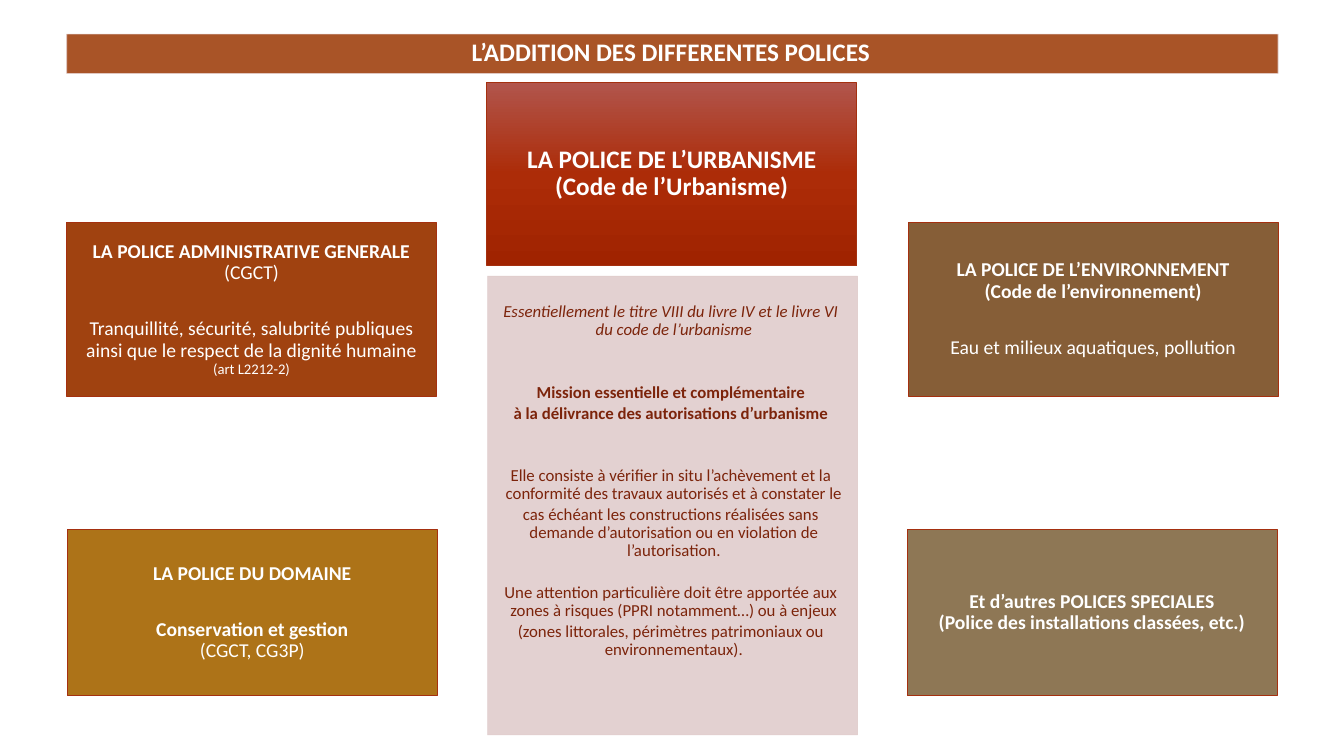
import copy

import pptx
import pptx.dml.color
import pptx.enum.shapes
import pptx.enum.text
import pptx.oxml.ns
import pptx.util
from lxml import etree

Cm = pptx.util.Cm
Pt = pptx.util.Pt
RGBColor = pptx.dml.color.RGBColor
Anchor = pptx.enum.text.MSO_ANCHOR
qn = pptx.oxml.ns.qn

WHITE = RGBColor(0xFF, 0xFF, 0xFF)
RUST = RGBColor(0xA0, 0x42, 0x10)
OCHRE = RGBColor(0xAD, 0x73, 0x18)
BROWN = RGBColor(0x86, 0x5E, 0x37)
TAUPE = RGBColor(0x8E, 0x77, 0x55)
PINK = RGBColor(0xE1, 0xCD, 0xCC)
MAROON = RGBColor(0x7C, 0x24, 0x0B)
BORDER = RGBColor(0xA5, 0x30, 0x0F)
URBANISME_STOPS = [
    (0, RGBColor(0xB1, 0x55, 0x4C)),
    (0.5, RGBColor(0xAC, 0x2C, 0x08)),
    (1, RGBColor(0xA0, 0x23, 0x00)),
]

BANNER = "L’ADDITION DES DIFFERENTES POLICES"
BANNER_PLACE = (1.68, 0.86, 30.53, 0.99)

# Each paragraph is (gap in lines, [(line, size, style), ...]).
MISSION = [
    (0, [("Essentiellement le titre VIII du livre IV et le livre VI du code de l’urbanisme", 12, "i")]),
    (2, [("Mission essentielle et complémentaire", 12, "b")]),
    (0, [("à la délivrance des autorisations d’urbanisme", 12, "b")]),
    (2, [("Elle consiste à vérifier in situ l’achèvement et la conformité des travaux "
          "autorisés et à constater le", 12, "")]),
    (0, [("cas échéant les constructions réalisées sans demande d’autorisation ou en "
          "violation de l’autorisation.", 12, "")]),
    (1, [("Une attention particulière doit être apportée aux zones à risques (PPRI "
          "notamment…) ou à enjeux", 12, "")]),
    (0, [("(zones littorales, périmètres patrimoniaux ou environnementaux).", 12, "")]),
]
MISSION_PLACE = (12.29, 6.96, 9.32, 11.56)

URBANISME = [(0, [("LA POLICE DE L’URBANISME", 18, "b"), ("(Code de l’Urbanisme)", 18, "b")])]
URBANISME_PLACE = (12.27, 2.08, 9.32, 4.62)

BOX_WIDTH = 9.32
UPPER_ROW = (5.61, 4.37)
LOWER_ROW = (13.34, 4.19)
POLICES = [
    (1.70, LOWER_ROW, OCHRE, [
        (0, [("LA POLICE DU DOMAINE", 14, "b")]),
        (1, [("Conservation et gestion", 14, "b"), ("(CGCT, CG3P)", 14, "")]),
    ]),
    (22.89, UPPER_ROW, BROWN, [
        (0, [("LA POLICE DE L’ENVIRONNEMENT", 14, "b"), ("(Code de l’environnement)", 14, "b")]),
        (1, [("Eau et milieux aquatiques, pollution", 14, "")]),
    ]),
    (22.86, LOWER_ROW, TAUPE, [
        (0, [("Et d’autres POLICES SPECIALES", 14, "b"),
             ("(Police des installations classées, etc.)", 14, "b")]),
    ]),
    (1.68, UPPER_ROW, RUST, [
        (0, [("LA POLICE ADMINISTRATIVE GENERALE", 14, "b"), ("(CGCT)", 14, "")]),
        (1, [("Tranquillité, sécurité, salubrité publiques ainsi que le respect de la "
              "dignité humaine", 14, ""), ("(art L2212-2)", 10.5, "")]),
    ]),
]


def paint(shape, fill, border, opacity=None):
    if fill:
        shape.fill.solid()
        shape.fill.fore_color.rgb = fill
    shape.line.color.rgb = border
    shape.line.width = Pt(0.5)
    if opacity:
        for colour in shape._element.spPr.iter(qn("a:srgbClr")):
            etree.SubElement(colour, qn("a:alpha"), val=str(opacity * 1000))


def write(shape, paragraphs, colour, spacing, insets, anchor, hanging=False):
    frame = shape.text_frame
    frame.word_wrap = True
    frame.auto_size = pptx.enum.text.MSO_AUTO_SIZE.NONE
    frame.vertical_anchor = anchor
    frame.margin_left, frame.margin_top, frame.margin_right, frame.margin_bottom = map(Cm, insets)
    frame.text = "\n".join("\v".join(line[0] for line in lines) for gap, lines in paragraphs)
    for paragraph, (gap, lines) in zip(frame.paragraphs, paragraphs):
        size = lines[0][1]
        after = size * spacing
        paragraph.alignment = pptx.enum.text.PP_ALIGN.CENTER
        paragraph.line_spacing = 0.9
        paragraph.space_before = Pt(gap * (size * 1.1 + after))
        paragraph.space_after = Pt(after)
        if hanging:
            properties = paragraph._p.get_or_add_pPr()
            properties.set("marL", str(Cm(0.15)))
            properties.set("indent", str(Cm(-0.15)))
        for run, (text, points, style) in zip(paragraph.runs, lines):
            run.font.name = "Calibri"
            run.font.size = Pt(points)
            run.font.bold = style == "b"
            run.font.italic = style == "i"
            run.font.color.rgb = colour
            following = run._r.getnext()
            if following is not None and following.tag == qn("a:br"):
                following.append(copy.deepcopy(run._r.rPr))


def add_box(slide, place):
    box = slide.shapes.add_shape(pptx.enum.shapes.MSO_SHAPE.RECTANGLE, *map(Cm, place))
    box.shadow.inherit = False
    return box


def main():
    deck = pptx.Presentation()
    deck.slide_width, deck.slide_height = Cm(33.87), Cm(19.05)
    slide = deck.slides.add_slide(deck.slide_layouts[5])

    mission = add_box(slide, MISSION_PLACE)
    paint(mission, PINK, PINK, 90)
    write(mission, MISSION, MAROON, 0.15, (0.15, 0.68, 0.23, 0.25), Anchor.TOP, True)

    urbanisme = add_box(slide, URBANISME_PLACE)
    urbanisme.fill.gradient()
    urbanisme.fill.gradient_angle = 270
    stops = urbanisme._element.spPr.find(".//" + qn("a:gsLst"))
    stops.insert(1, copy.deepcopy(stops[0]))
    for stop, (position, colour) in zip(urbanisme.fill.gradient_stops, URBANISME_STOPS):
        stop.position = position
        stop.color.rgb = colour
    paint(urbanisme, None, BORDER)
    box_insets = (0.23, 0.13, 0.23, 0.13)
    write(urbanisme, URBANISME, WHITE, 0.35, box_insets, Anchor.MIDDLE)

    banner = slide.shapes.title
    banner.left, banner.top, banner.width, banner.height = map(Cm, BANNER_PLACE)
    paint(banner, RUST, PINK, 90)
    write(banner, [(0, [(BANNER, 18, "b")])], WHITE, 0.15, (0.15, 0.15, 0.23, 0.25), Anchor.TOP, True)

    for left, (top, height), fill, paragraphs in POLICES:
        police = add_box(slide, (left, top, BOX_WIDTH, height))
        paint(police, fill, BORDER)
        write(police, paragraphs, WHITE, 0.35, box_insets, Anchor.MIDDLE)

    deck.save("out.pptx")


if __name__ == "__main__":
    main()
